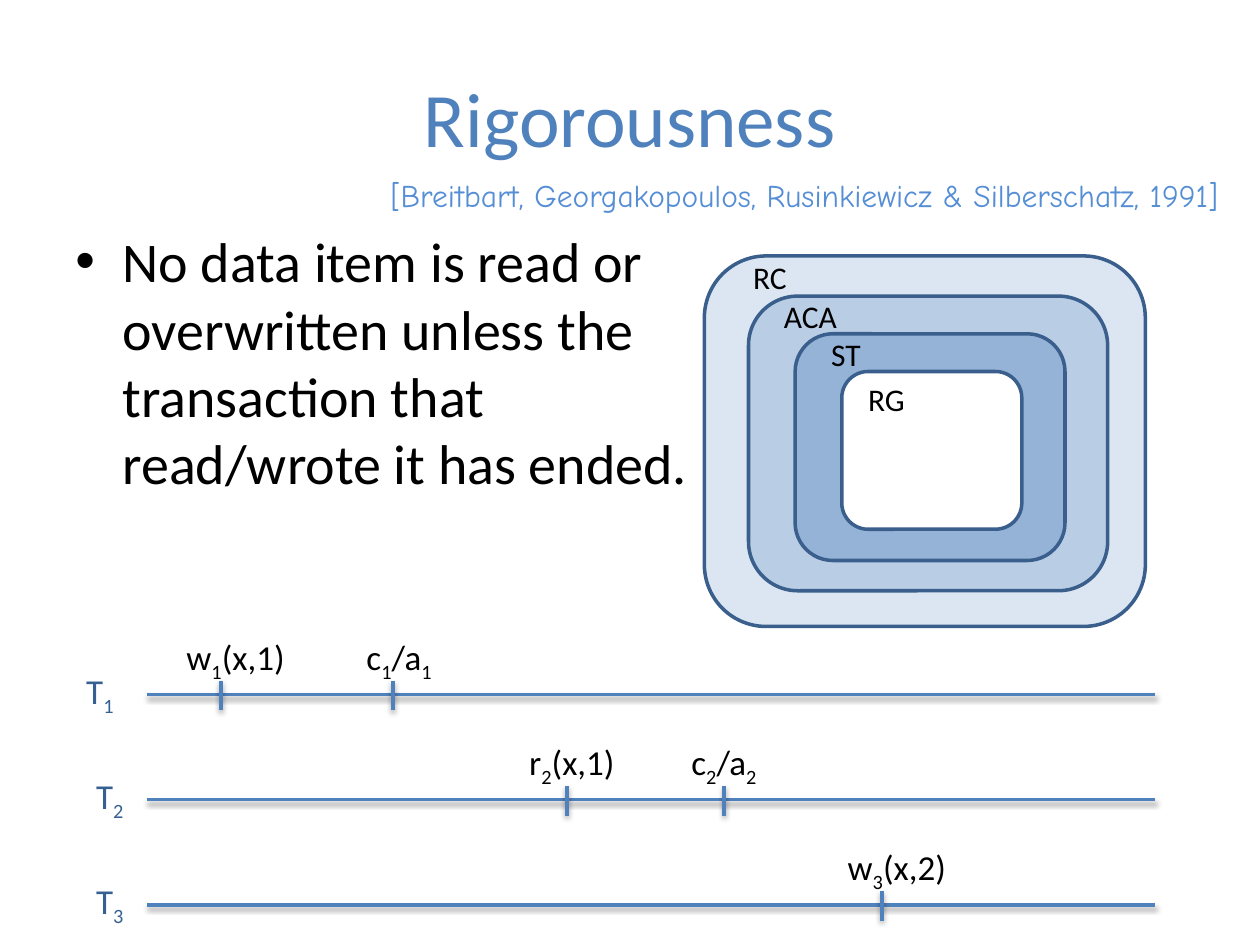
from lxml.etree import SubElement
from pptx import Presentation
from pptx.dml.color import RGBColor
from pptx.enum.shapes import MSO_CONNECTOR, MSO_SHAPE
from pptx.enum.text import MSO_ANCHOR as Anchor, PP_ALIGN as Align
from pptx.oxml import parse_xml
from pptx.oxml.ns import nsdecls, qn
from pptx.util import Cm, Pt

BLACK = RGBColor(0x00, 0x00, 0x00)
BLUE = RGBColor(0x4F, 0x81, 0xBD)
DARK_BLUE = RGBColor(0x37, 0x60, 0x92)
CITE_BLUE = RGBColor(0x55, 0x8E, 0xD5)
OUTLINE = RGBColor(0x3A, 0x5F, 0x8C)
CLASS_FILLS = [RGBColor(0xDC, 0xE6, 0xF2), RGBColor(0xB9, 0xCD, 0xE5),
               RGBColor(0x95, 0xB3, 0xD7), RGBColor(0xFF, 0xFF, 0xFF)]

# Content; lengths in cm, "_" marks the next character as a subscript
TITLE = "Rigorousness"
CITATION = "[Breitbart, Georgakopoulos, Rusinkiewicz & Silberschatz, 1991]"
DEFINITION = ("No data item is read or \noverwritten unless the \n"
              "transaction that \nread/wrote it has ended.")
# Schedule classes, outermost first: name, box, label left, top, width
CLASSES = [
    ("RC", (14.2, 5.16, 8.89, 7.47), (14.38, 5.08, 1.73)),
    ("ACA", (15.09, 5.97, 7.24, 5.94), (15.32, 5.87, 1.8)),
    ("ST", (16.03, 6.73, 5.44, 4.57), (15.95, 6.63, 1.65)),
    ("RG", (16.97, 7.49, 3.63, 3.18), (16.92, 7.54, 1.57)),
]
# Transactions: name, name left, operations (text, label left, width, tick x)
TRANSACTIONS = [
    ("T_1", 1.27, [("w_1(x,1)", 3.38, 2.74, 4.45), ("c_1/a_1", 6.99, 2.11, 7.92)]),
    ("T_2", 1.47, [("r_2(x,1)", 10.26, 2.54, 11.43), ("c_2/a_2", 13.54, 2.11, 14.6)]),
    ("T_3", 1.47, [("w_3(x,2)", 16.71, 2.74, 17.78)]),
]
LINE_LEFT, LINE_RIGHT = 2.97, 23.29
FIRST_LINE_Y, LINE_STEP = 14, 2.12
TICK_UP, TICK_DOWN = 0.28, 0.32

prs = Presentation()
prs.slide_width, prs.slide_height = Cm(25.4), Cm(19.05)
slide = prs.slides.add_slide(prs.slide_layouts[6])


def add_text(text, left, top, width, height, size=20, color=BLACK,
             font="Calibri", align=Align.CENTER, anchor=Anchor.TOP):
    box = slide.shapes.add_textbox(Cm(left), Cm(top), Cm(width), Cm(height))
    frame = box.text_frame
    frame.word_wrap = True
    frame.vertical_anchor = anchor
    paragraph = frame.paragraphs[0]
    paragraph.alignment = align

    def add_run(words, subscript=False):
        run = paragraph.add_run()
        run.text = words
        run.font.name, run.font.size = font, Pt(size)
        run.font.color.rgb = color
        if subscript:
            run.font._element.set("baseline", "-25000")

    for number, line in enumerate(text.split("\n")):
        if number:
            paragraph.add_line_break()
        plain, *marked = line.split("_")
        add_run(plain)
        for part in marked:
            add_run(part[0], subscript=True)
            if part[1:]:
                add_run(part[1:])
    return paragraph


def add_line(x1, y1, x2, y2):
    line = slide.shapes.add_connector(
        MSO_CONNECTOR.STRAIGHT, Cm(x1), Cm(y1), Cm(x2), Cm(y2))
    line.line.color.rgb, line.line.width = BLUE, Pt(2)
    line._element.spPr.append(parse_xml(
        f'<a:effectLst {nsdecls("a")}><a:outerShdw blurRad="40000" dist="20000" '
        'dir="5400000" rotWithShape="0"><a:srgbClr val="000000">'
        '<a:alpha val="38000"/></a:srgbClr></a:outerShdw></a:effectLst>'))


# Title, citation and definition
add_text(TITLE, 1.27, 0.76, 22.86, 3.18, size=44, color=BLUE, anchor=Anchor.MIDDLE)
definition = add_text(DEFINITION, 1.27, 4.45, 22.86, 14.6, size=32, align=Align.LEFT)
definition.space_before = Pt(6.4)
bullet_props = definition._p.get_or_add_pPr()
bullet_props.set("marL", str(Cm(0.95)))
bullet_props.set("indent", str(-Cm(0.95)))
SubElement(bullet_props, qn("a:buFont")).set("typeface", "Arial")
SubElement(bullet_props, qn("a:buChar")).set("char", "•")
add_text(CITATION, 5.28, 3.43, 19.53, 1.02, size=18, color=CITE_BLUE,
         font="Comic Neue", align=Align.RIGHT)

# Timelines with operations
for row, (name, name_left, operations) in enumerate(TRANSACTIONS):
    y = FIRST_LINE_Y + row * LINE_STEP
    add_line(LINE_LEFT, y, LINE_RIGHT, y)
    add_text(name, name_left, y - 0.63, 1.27, 1.11, color=DARK_BLUE, align=Align.RIGHT)
    for operation, left, width, tick_x in operations:
        add_text(operation, left, y - 1.56, width, 1.7, anchor=Anchor.MIDDLE)
        add_line(tick_x, y - TICK_UP, tick_x, y + TICK_DOWN)

# Nested schedule classes, then their labels on top
for (name, box, label), fill in zip(CLASSES, CLASS_FILLS):
    region = slide.shapes.add_shape(MSO_SHAPE.ROUNDED_RECTANGLE, *map(Cm, box))
    region.shadow.inherit = False
    region.fill.solid()
    region.fill.fore_color.rgb = fill
    region.line.color.rgb, region.line.width = OUTLINE, Pt(2)
for name, box, label in CLASSES:
    add_text(name, *label, 1.02, size=18, align=Align.RIGHT)

prs.save("out.pptx")
